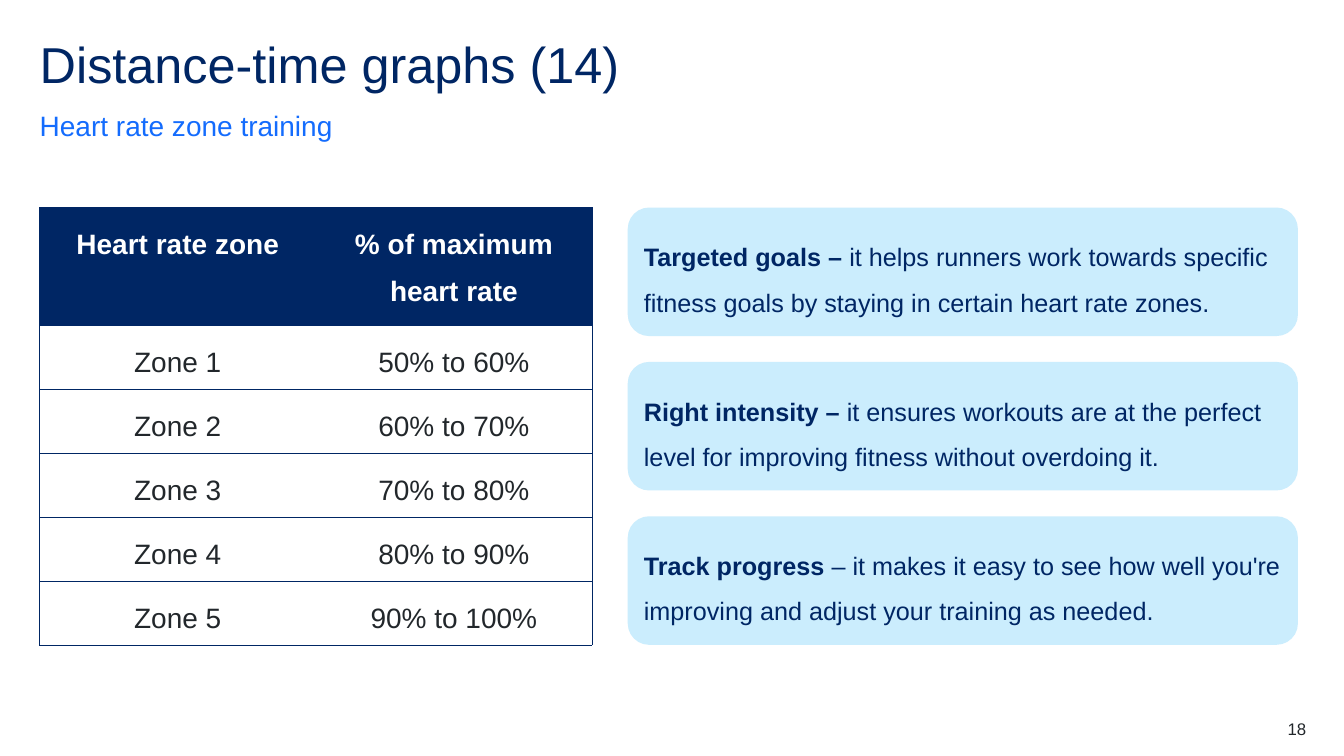
from lxml.etree import SubElement
from pptx import Presentation
from pptx.dml.color import RGBColor
from pptx.enum.shapes import MSO_SHAPE
from pptx.enum.text import MSO_ANCHOR, MSO_AUTO_SIZE, PP_ALIGN
from pptx.oxml import parse_xml
from pptx.oxml.ns import nsdecls, qn
from pptx.util import Cm, Pt

COLOURS = {
    "navy": "002664",
    "blue": "146CFD",
    "pale": "CBEDFD",
    "text": "22272B",
    "white": "FFFFFF",
}
ZONES = [
    ("Heart rate zone", "% of maximum heart rate"),
    ("Zone 1", "50% to 60%"),
    ("Zone 2", "60% to 70%"),
    ("Zone 3", "70% to 80%"),
    ("Zone 4", "80% to 90%"),
    ("Zone 5", "90% to 100%"),
]
BENEFITS = [
    [("Targeted goals –", True),
     (" it helps runners work towards specific fitness goals by staying"
      " in certain heart rate zones.", False)],
    [("Right intensity –", True),
     (" it ensures workouts are at the perfect level for improving fitness"
      " without overdoing it.", False)],
    [("Track progress", True),
     (" – it makes it easy to see how well you're improving and adjust"
      " your training as needed.", False)],
]
LEFT, TOP = 1, 5.23
CARD_HEIGHT, CARD_GAP = 3.24, 0.65


def rgb(name):
    return RGBColor.from_string(COLOURS[name])


class SlideBuilder:
    font = "Arial"

    def __init__(self, prs):
        self.slide = prs.slides.add_slide(prs.slide_layouts[1])

    def add_text(self, tf, runs, size, colour, align=PP_ALIGN.LEFT, spacing=1.5, after=12):
        """Fill the first paragraph with (text, bold) runs."""
        p = tf.paragraphs[0]
        p.alignment, p.line_spacing = align, spacing
        p.space_before, p.space_after = Pt(0), Pt(after)
        for text, bold in runs:
            r = p.add_run()
            r.text = text
            r.font.name, r.font.size, r.font.bold = self.font, Pt(size), bold
            r.font.color.rgb = rgb(colour)

    def frame(self, sp, box, anchor=MSO_ANCHOR.TOP):
        """Place a text shape and remove its insets."""
        sp.left, sp.top, sp.width, sp.height = map(Cm, box)
        tf = sp.text_frame
        tf.margin_left = tf.margin_right = tf.margin_top = tf.margin_bottom = 0
        tf.word_wrap, tf.auto_size = True, MSO_AUTO_SIZE.NONE
        tf.vertical_anchor = anchor
        return tf

    def title(self, text):
        tf = self.frame(self.slide.shapes.title, (LEFT, 1, 31.9, 1.52))
        self.add_text(tf, [(text, False)], 36, "navy", spacing=0.9, after=0)

    def subtitle(self, text):
        sp = self.slide.placeholders[1]
        tf = self.frame(sp, (LEFT, 2.72, 31.9, 0.86), MSO_ANCHOR.BOTTOM)
        pPr = tf.paragraphs[0]._p.get_or_add_pPr()
        pPr.set("marL", "0")
        pPr.set("indent", "0")
        SubElement(pPr, qn("a:buNone"))
        self.add_text(tf, [(text, False)], 20, "blue")

    def page_number(self, text):
        sp = self.slide.shapes.add_textbox(0, 0, 0, 0)
        tf = self.frame(sp, (30.91, 18.11, 2.01, 0.51))
        self.add_text(tf, [(text, False)], 12, "text", PP_ALIGN.RIGHT, spacing=1, after=0)

    def card(self, runs, left, top, width, height):
        sp = self.slide.shapes.add_shape(
            MSO_SHAPE.ROUNDED_RECTANGLE, Cm(left), Cm(top), Cm(width), Cm(height))
        sp.shadow.inherit = False
        sp.fill.solid()
        sp.fill.fore_color.rgb = rgb("pale")
        sp.line.fill.background()
        sp.text_frame.word_wrap = True
        sp.text_frame.vertical_anchor = MSO_ANCHOR.MIDDLE
        self.add_text(sp.text_frame, runs, 18, "navy")

    def borders(self, cell, sides):
        """Draw thin navy borders on the given sides and none on the others."""
        tcPr = cell._tc.get_or_add_tcPr()
        for side in "LRTB":
            paint = (f'<a:solidFill><a:srgbClr val="{COLOURS["navy"]}"/></a:solidFill>'
                     if side in sides else "<a:noFill/>")
            tcPr.append(parse_xml(
                f'<a:ln{side} {nsdecls("a")} w="{Pt(0.5)}">{paint}</a:ln{side}>'))

    def table(self, rows, left, top, col_width, header_height, row_height):
        count = len(rows[0])
        height = header_height + row_height * (len(rows) - 1)
        table = self.slide.shapes.add_table(
            len(rows), count, Cm(left), Cm(top), Cm(col_width * count), Cm(height)).table
        table.horz_banding = False
        for column in table.columns:
            column.width = Cm(col_width)
        for i, values in enumerate(rows):
            header = i == 0
            table.rows[i].height = Cm(header_height if header else row_height)
            for j, value in enumerate(values):
                cell = table.cell(i, j)
                cell.margin_left = cell.margin_right = Cm(0.33)
                cell.margin_top = cell.margin_bottom = Cm(0.16)
                self.borders(cell, "TB" + "L" * (j == 0) + "R" * (j == count - 1))
                if header:
                    cell.fill.solid()
                    cell.fill.fore_color.rgb = rgb("navy")
                else:
                    cell.fill.background()
                self.add_text(cell.text_frame, [(value, header)], 20,
                              "white" if header else "text", PP_ALIGN.CENTER)


def main():
    prs = Presentation()
    prs.slide_width, prs.slide_height = Cm(33.87), Cm(19.05)
    s = SlideBuilder(prs)
    s.title("Distance-time graphs (14)")
    s.subtitle("Heart rate zone training")
    s.table(ZONES, LEFT, TOP, col_width=6.96, header_height=2.97, row_height=1.61)
    for i, runs in enumerate(BENEFITS):
        s.card(runs, 15.82, TOP + i * (CARD_HEIGHT + CARD_GAP), 16.89, CARD_HEIGHT)
    s.page_number("18")
    prs.save("out.pptx")


if __name__ == "__main__":
    main()
